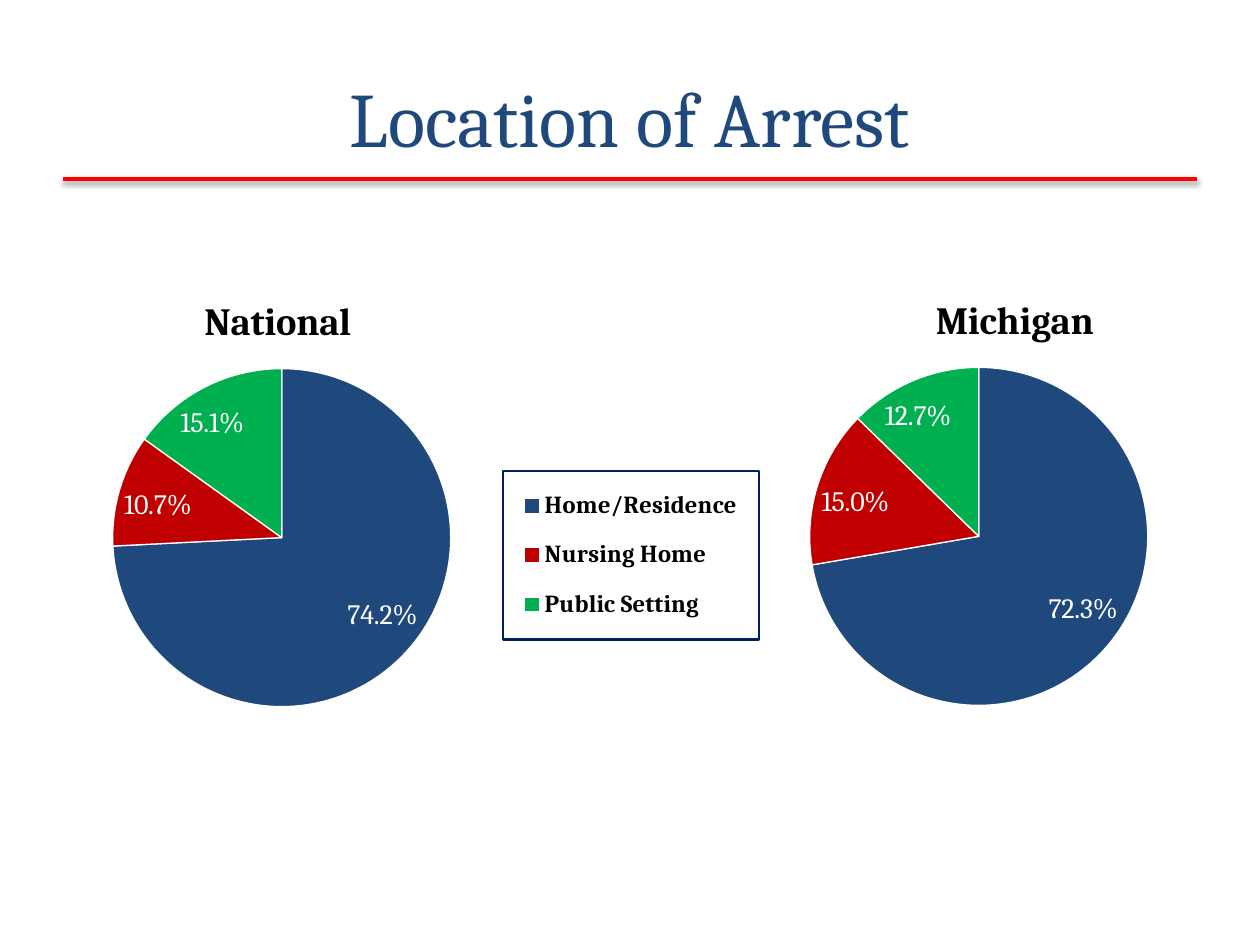
from lxml.etree import SubElement
from pptx import Presentation
from pptx.chart.data import CategoryChartData
from pptx.dml.color import RGBColor
from pptx.enum.chart import XL_CHART_TYPE, XL_LABEL_POSITION, XL_LEGEND_POSITION
from pptx.enum.shapes import MSO_CONNECTOR
from pptx.enum.text import MSO_ANCHOR, PP_ALIGN
from pptx.oxml import parse_xml
from pptx.oxml.ns import nsdecls, qn
from pptx.util import Inches, Pt

NAVY = RGBColor(0x1F, 0x49, 0x7D)
CRIMSON = RGBColor(0xC0, 0x00, 0x00)
GREEN = RGBColor(0x00, 0xB0, 0x50)
RED = RGBColor(0xFF, 0x00, 0x00)
BLACK = RGBColor(0x00, 0x00, 0x00)
WHITE = RGBColor(0xFF, 0xFF, 0xFF)

FONT = "Cambria"
LOCATIONS = {"Home/Residence": NAVY, "Nursing Home": CRIMSON, "Public Setting": GREEN}
PIE_AREA = {"x": 0.103, "y": 0.276, "w": 0.548, "h": 0.542}
LEGEND_AREA = {"x": 0.658, "y": 0.44, "w": 0.325, "h": 0.27}


def style_font(font, size, color, bold=False):
    font.name, font.size, font.bold = FONT, Pt(size), bold
    font.color.rgb = color


def set_layout(element, index, area, inner=False):
    """Place a chart part by fractions of the chart's width and height."""
    for old_layout in element.findall(qn("c:layout")):
        element.remove(old_layout)
    layout = parse_xml(f"<c:layout {nsdecls('c')}><c:manualLayout/></c:layout>")
    manual = layout[0]
    if inner:
        SubElement(manual, qn("c:layoutTarget"), val="inner")
    for axis in "xy":
        SubElement(manual, qn(f"c:{axis}Mode"), val="edge")
    for key, fraction in area.items():
        SubElement(manual, qn(f"c:{key}"), val=str(fraction))
    element.insert(index, layout)


def add_heading(slide, left, top, width, height):
    title = slide.shapes.title
    title.left, title.top, title.width, title.height = left, top, width, height
    frame = title.text_frame
    frame.text = "Location of Arrest"
    frame.vertical_anchor = MSO_ANCHOR.MIDDLE
    heading = frame.paragraphs[0]
    heading.alignment = PP_ALIGN.CENTER
    style_font(heading.runs[0].font, 44, NAVY)


def add_rule(slide, left, top, width):
    rule = slide.shapes.add_connector(
        MSO_CONNECTOR.STRAIGHT, left, top, left + width, top)
    rule.line.color.rgb = RED
    rule.line.width = Pt(2)
    rule._element.spPr.append(parse_xml(
        f'<a:effectLst {nsdecls("a")}>'
        f'<a:outerShdw blurRad="{Pt(3.1)}" dist="{Pt(1.6)}" dir="5400000" rotWithShape="0">'
        '<a:srgbClr val="000000"><a:alpha val="38000"/></a:srgbClr>'
        '</a:outerShdw></a:effectLst>'))


def add_legend(chart):
    chart.has_legend = True
    legend = chart.legend
    legend.position = XL_LEGEND_POSITION.RIGHT
    legend.include_in_layout = False
    style_font(legend.font, 14, BLACK, bold=True)
    set_layout(legend._element, 1, LEGEND_AREA)
    legend._element.find(qn("c:txPr")).addprevious(parse_xml(
        f'<c:spPr {nsdecls("c", "a")}><a:ln w="{Pt(1.5)}">'
        '<a:solidFill><a:srgbClr val="002060"/></a:solidFill></a:ln></c:spPr>'))


def add_arrest_pie(slide, box, region, shares, title_area, with_legend=False):
    arrests = CategoryChartData(number_format="0.0")
    arrests.categories = LOCATIONS
    arrests.add_series("Series 1", shares)
    chart = slide.shapes.add_chart(XL_CHART_TYPE.PIE, *box, arrests).chart
    style_font(chart.font, 18, BLACK)

    chart.has_title = True
    chart.chart_title.text_frame.text = region
    style_font(chart.chart_title.text_frame.paragraphs[0].runs[0].font, 22, BLACK, bold=True)
    set_layout(chart.chart_title._element, 1, title_area)
    set_layout(chart._chartSpace.chart.plotArea, 0, PIE_AREA, inner=True)

    chart.has_legend = False
    if with_legend:
        add_legend(chart)

    pie = chart.plots[0]
    pie.vary_by_categories = True
    for index, color in enumerate(LOCATIONS.values()):
        slice_format = pie.series[0].points[index].format
        slice_format.fill.solid()
        slice_format.fill.fore_color.rgb = color
        slice_format.line.color.rgb = WHITE
        slice_format.line.width = Pt(0.75)

    labels = pie.series[0].data_labels
    labels.show_percentage, labels.show_value = True, False
    labels.number_format, labels.number_format_is_linked = "0.0%", False
    labels.position = XL_LABEL_POSITION.BEST_FIT
    style_font(labels.font, 16, WHITE)


def main():
    deck = Presentation()
    deck.slide_width, deck.slide_height = Inches(10), Inches(7.5)
    slide = deck.slides.add_slide(deck.slide_layouts[5])
    add_rule(slide, Inches(0.5), Inches(1.42), Inches(9))
    add_heading(slide, Inches(0.5), Inches(0.3), Inches(9), Inches(1.25))
    add_arrest_pie(
        slide, (Inches(-0.12), Inches(1.56), Inches(6.25), Inches(4.95)),
        "National", (74.2, 10.7, 15.1), {"x": 0.27, "y": 0.15}, with_legend=True)
    add_arrest_pie(
        slide, (Inches(5.83), Inches(1.55), Inches(5.14), Inches(4.95)),
        "Michigan", (72.3, 15, 12.7), {"x": 0.3, "y": 0.15})
    deck.save("out.pptx")


if __name__ == "__main__":
    main()
